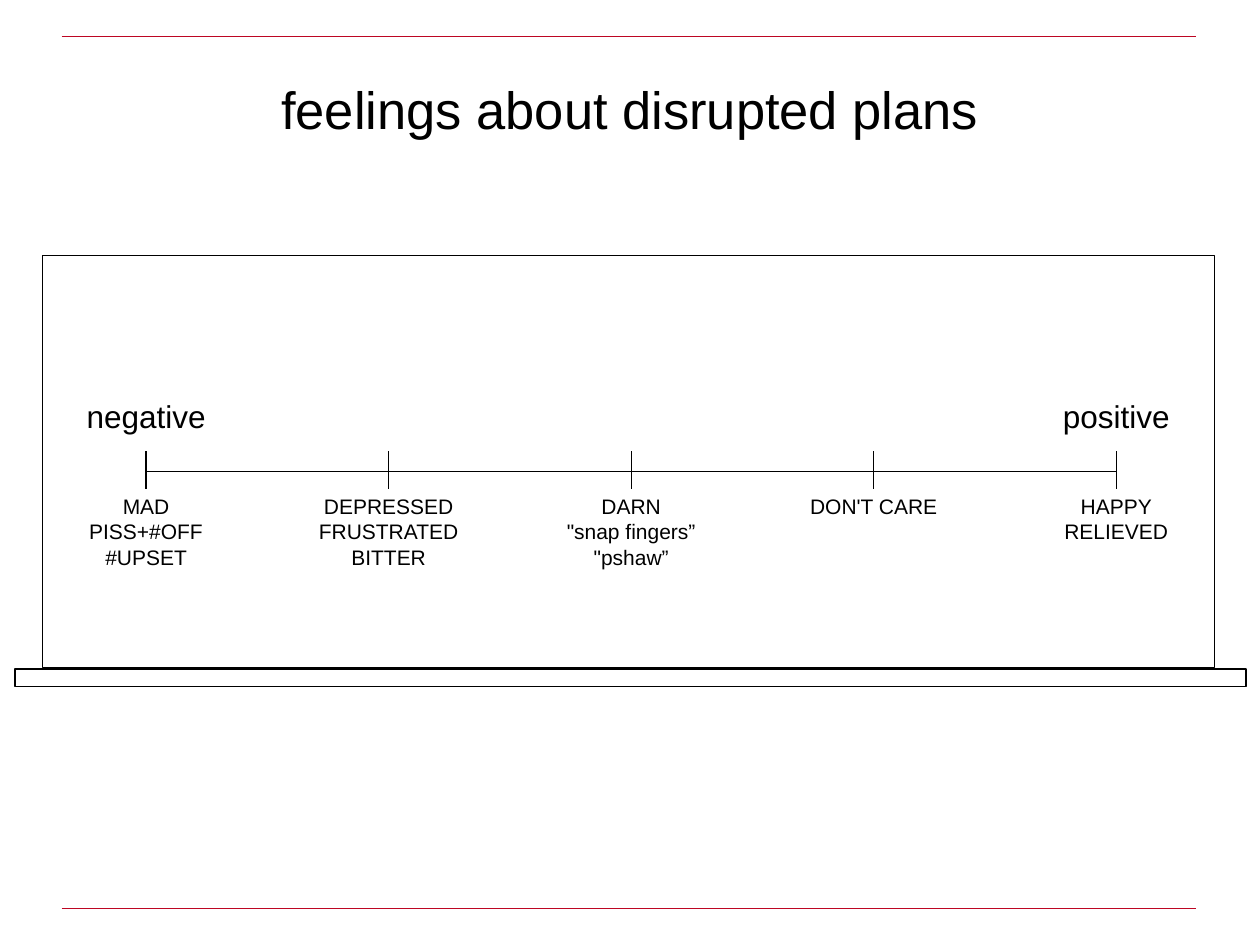
from dataclasses import dataclass

from lxml.etree import SubElement
from pptx import Presentation
from pptx.dml.color import RGBColor
from pptx.enum.shapes import MSO_CONNECTOR, MSO_SHAPE
from pptx.enum.text import MSO_ANCHOR, PP_ALIGN
from pptx.oxml.ns import qn
from pptx.util import Inches, Pt

TITLE = "feelings about disrupted plans"
SCALE = [
    ["MAD", "PISS+#OFF", "#UPSET"],
    ["DEPRESSED", "FRUSTRATED", "BITTER"],
    ["DARN", '"snap fingers”', '"pshaw”'],
    ["DON'T CARE"],
    ["HAPPY", "RELIEVED"],
]
POLES = {0: "negative", len(SCALE) - 1: "positive"}

# left, top, width, height in inches
BOARD = (0.34, 2.03, 9.3, 3.27)
TRAY = (0.12, 5.31, 9.77, 0.14)
TITLE_AREA = (0.5, 0.33, 9, 1.06)

RULE_LEFT, RULE_RIGHT = 0.49, 9.49
RULE_TOPS = (0.29, 7.21)
AXIS_LEFT, AXIS_RIGHT, AXIS_Y = 1.16, 8.86, 3.74
TICK_TOP, TICK_BOTTOM = 3.58, 3.88
POLE_TOP, FEELING_TOP = 3.1, 3.87
LABEL_WIDTH = 1.5


@dataclass(frozen=True)
class Theme:
    font: str = "Arial"
    ink: RGBColor = RGBColor(0x00, 0x00, 0x00)
    accent: RGBColor = RGBColor(0xBD, 0x06, 0x23)
    title_size: float = 30
    pole_size: float = 18
    feeling_size: float = 12
    outline: float = 0.75
    rule: float = 1


THEME = Theme()


def add_line(slide, start, end, color=THEME.ink, weight=THEME.outline):
    line = slide.shapes.add_connector(
        MSO_CONNECTOR.STRAIGHT, *map(Inches, (*start, *end)))
    line.line.color.rgb = color
    line.line.width = Pt(weight)
    SubElement(line._element.spPr, qn("a:effectLst"))


def add_outline(slide, area):
    outline = slide.shapes.add_shape(MSO_SHAPE.RECTANGLE, *map(Inches, area))
    outline.shadow.inherit = False
    outline.fill.background()
    outline.line.color.rgb = THEME.ink
    outline.line.width = Pt(THEME.outline)


def write(frame, lines, size):
    """Fill a text frame with one centred paragraph per line."""
    frame.word_wrap = True
    frame.text = "\n".join(lines)
    for paragraph in frame.paragraphs:
        paragraph.alignment = PP_ALIGN.CENTER
        for run in paragraph.runs:
            run.font.name = THEME.font
            run.font.size = Pt(size)
            run.font.color.rgb = THEME.ink


def add_label(slide, center, top, lines, size):
    height = 0.1 + len(lines) * size * 1.2 / 72
    label = slide.shapes.add_textbox(
        *map(Inches, (center - LABEL_WIDTH / 2, top, LABEL_WIDTH, height)))
    write(label.text_frame, lines, size)


def add_title(slide):
    title = slide.shapes.title
    title.left, title.top, title.width, title.height = map(Inches, TITLE_AREA)
    write(title.text_frame, [TITLE], THEME.title_size)
    title.text_frame.vertical_anchor = MSO_ANCHOR.MIDDLE


def add_scale(slide):
    add_line(slide, (AXIS_LEFT, AXIS_Y), (AXIS_RIGHT, AXIS_Y))
    step = (AXIS_RIGHT - AXIS_LEFT) / (len(SCALE) - 1)
    for position, feelings in enumerate(SCALE):
        x = AXIS_LEFT + position * step
        add_line(slide, (x, TICK_TOP), (x, TICK_BOTTOM))
        add_label(slide, x, FEELING_TOP, feelings, THEME.feeling_size)
        if position in POLES:
            add_label(slide, x, POLE_TOP, [POLES[position]], THEME.pole_size)


def main():
    deck = Presentation()
    deck.slide_width, deck.slide_height = Inches(10), Inches(7.5)
    slide = deck.slides.add_slide(deck.slide_layouts[5])
    add_title(slide)
    for y in RULE_TOPS:
        add_line(slide, (RULE_LEFT, y), (RULE_RIGHT, y), THEME.accent, THEME.rule)
    for area in (BOARD, TRAY):
        add_outline(slide, area)
    add_scale(slide)
    deck.save("out.pptx")


if __name__ == "__main__":
    main()
